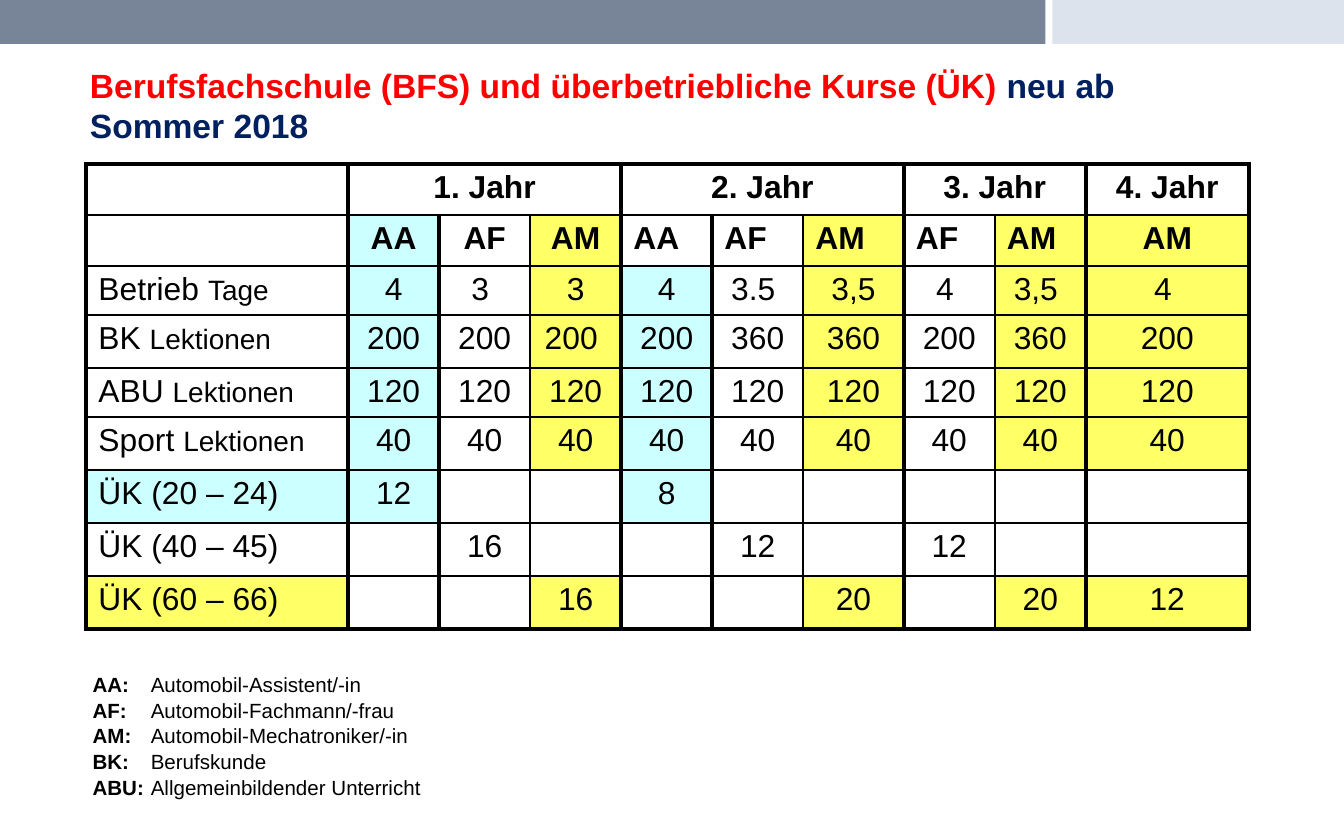
from lxml import etree
from pptx import Presentation
from pptx.dml.color import RGBColor
from pptx.enum.shapes import MSO_SHAPE
from pptx.enum.text import PP_ALIGN
from pptx.oxml.ns import qn
from pptx.util import Cm, Pt

RECT = MSO_SHAPE.RECTANGLE
LEFT, MID = PP_ALIGN.LEFT, PP_ALIGN.CENTER

CYAN, GOLD, BLACK = "CCFFFF", "FFFF66", "000000"
BARS = [(0, 19.76, "788598"), (19.89, 5.51, "DCE3EC")]
TITLE = [
    ("Berufsfachschule (BFS) und überbetriebliche Kurse (ÜK) ", "FE0000"),
    ("neu ab Sommer 2018", "002060"),
]
YEARS = [("1. Jahr", 1, 3), ("2. Jahr", 4, 3), ("3. Jahr", 7, 2), ("4. Jahr", 9, 1)]
KINDS = ["", "AA", "AF", "AM", "AA", "AF", "AM", "AF", "AM", "AM"]
ROWS = [
    ("Betrieb ", "Tage", ["4", "3 ", "3", "4", "3.5 ", "3,5", "4 ", "3,5 ", "4 "]),
    ("BK ", "Lektionen", ["200", "200", "200 ", "200", "360", "360", "200", "360", "200"]),
    ("ABU ", "Lektionen", ["120"] * 9),
    ("Sport ", "Lektionen", ["40"] * 9),
    ("ÜK (20 – 24)", "", ["12", "", "", "8", "", "", "", "", ""]),
    ("ÜK (40 – 45)", "", ["", "16", "", "", "12", "", "12", "", ""]),
    ("ÜK (60 – 66)", "", ["", "", "16", "", "", "20", "", "20", "12"]),
]
TERMS = [
    ("AA:", "Automobil-Assistent/-in"),
    ("AF:", "Automobil-Fachmann/-frau"),
    ("AM:", "Automobil-Mechatroniker/-in"),
    ("BK:", "Berufskunde"),
    ("ABU:", "Allgemeinbildender Unterricht"),
]
TINTS = {"AA": CYAN, "AM": GOLD}
LABELS = {6: CYAN, 8: GOLD}
PLAIN = {(1, 4)}
WIDTHS = [4.95] + [1.72] * 5 + [1.9] + [1.72] * 2 + [3.08]
HEIGHTS = [0.94, 0.94, 0.93, 1, 0.93, 1, 1, 1, 1]
THIN_COLS = {3, 6, 8}
INSETS = {"margin_left": 0.23, "margin_right": 0.23,
          "margin_top": 0.1, "margin_bottom": 0.1}


def rgb(code):
    return RGBColor.from_string(code)


def inset(part):
    for name, size in INSETS.items():
        setattr(part, name, Cm(size))


def write(para, text, size, color=BLACK, bold=False):
    run = para.add_run()
    run.text = text
    for name, value in {"name": "Arial", "size": Pt(size), "bold": bold}.items():
        setattr(run.font, name, value)
    run.font.color.rgb = rgb(color)


def add_box(slide, left, top, width, height):
    frame = slide.shapes.add_textbox(Cm(left), Cm(top), Cm(width), Cm(height)).text_frame
    frame.word_wrap = True
    return frame


def add_edge(cell, side, width):
    props = cell._tc.get_or_add_tcPr()
    line = etree.SubElement(props, qn("a:ln" + side), w=str(Pt(width)))
    fill = etree.SubElement(line, qn("a:solidFill"))
    etree.SubElement(fill, qn("a:srgbClr"), val=BLACK)


def edge_cell(cell, row, col):
    sides = {}
    if not cell.is_spanned:
        end = col + (cell.span_width if cell.is_merge_origin else 1)
        sides = {"L": col not in THIN_COLS, "R": end not in THIN_COLS}
    sides["T"] = row == 0
    sides["B"] = row == len(HEIGHTS) - 1
    for side, heavy in sides.items():
        add_edge(cell, side, 2.25 if heavy else 1)


def tint(row, col, text):
    if col == 0:
        return LABELS.get(row)
    if row == 0 or not text or (row, col) in PLAIN:
        return None
    return TINTS.get(KINDS[col])


def add_grid(slide):
    heads = {col: text for text, col, span in YEARS}
    lines = [[heads.get(col, "") for col in range(len(KINDS))], KINDS]
    lines += [[name] + values for name, unit, values in ROWS]
    units = ["", ""] + [unit for name, unit, values in ROWS]

    table = slide.shapes.add_table(
        len(HEIGHTS), len(WIDTHS), Cm(1.63), Cm(3.1),
        Cm(sum(WIDTHS)), Cm(sum(HEIGHTS))).table
    table.first_row = table.horz_banding = False
    for col, width in enumerate(WIDTHS):
        table.columns[col].width = Cm(width)
    for row, height in enumerate(HEIGHTS):
        table.rows[row].height = Cm(height)
    for text, col, span in YEARS:
        if span > 1:
            table.cell(0, col).merge(table.cell(0, col + span - 1))

    for row, line in enumerate(lines):
        for col, text in enumerate(line):
            cell = table.cell(row, col)
            inset(cell)
            edge_cell(cell, row, col)
            color = tint(row, col, text)
            if color:
                cell.fill.solid()
                cell.fill.fore_color.rgb = rgb(color)
            else:
                cell.fill.background()
            para = cell.text_frame.paragraphs[0]
            flush = col == 0 or (row == 1 and 4 <= col <= 8)
            para.alignment = LEFT if flush else MID
            write(para, text, 17, bold=row < 2)
            if col == 0 and units[row]:
                write(para, units[row], 15)


def add_terms(slide):
    frame = add_box(slide, 1.5, 12.55, 10.29, 3.18)
    for i, (short, full) in enumerate(TERMS):
        para = frame.add_paragraph() if i else frame.paragraphs[0]
        tabs = etree.SubElement(para._p.get_or_add_pPr(), qn("a:tabLst"))
        etree.SubElement(tabs, qn("a:tab"), pos=str(Cm(1.1)), algn="l")
        para.line_spacing = 1.05
        write(para, short + "\t", 11, bold=True)
        write(para, full, 11)


def main():
    deck = Presentation()
    deck.slide_width, deck.slide_height = Cm(25.4), Cm(15.88)
    slide = deck.slides.add_slide(deck.slide_layouts[6])
    for left, width, color in BARS:
        bar = slide.shapes.add_shape(RECT, Cm(left), 0, Cm(width), Cm(0.83))
        bar.shadow.inherit = False
        bar.fill.solid()
        bar.fill.fore_color.rgb = rgb(color)
        bar.line.fill.background()
    title = add_box(slide, 1.47, 1.12, 22.48, 1.75)
    inset(title)
    for text, color in TITLE:
        write(title.paragraphs[0], text, 18, color, True)
    add_grid(slide)
    add_terms(slide)
    deck.save("out.pptx")


if __name__ == "__main__":
    main()
